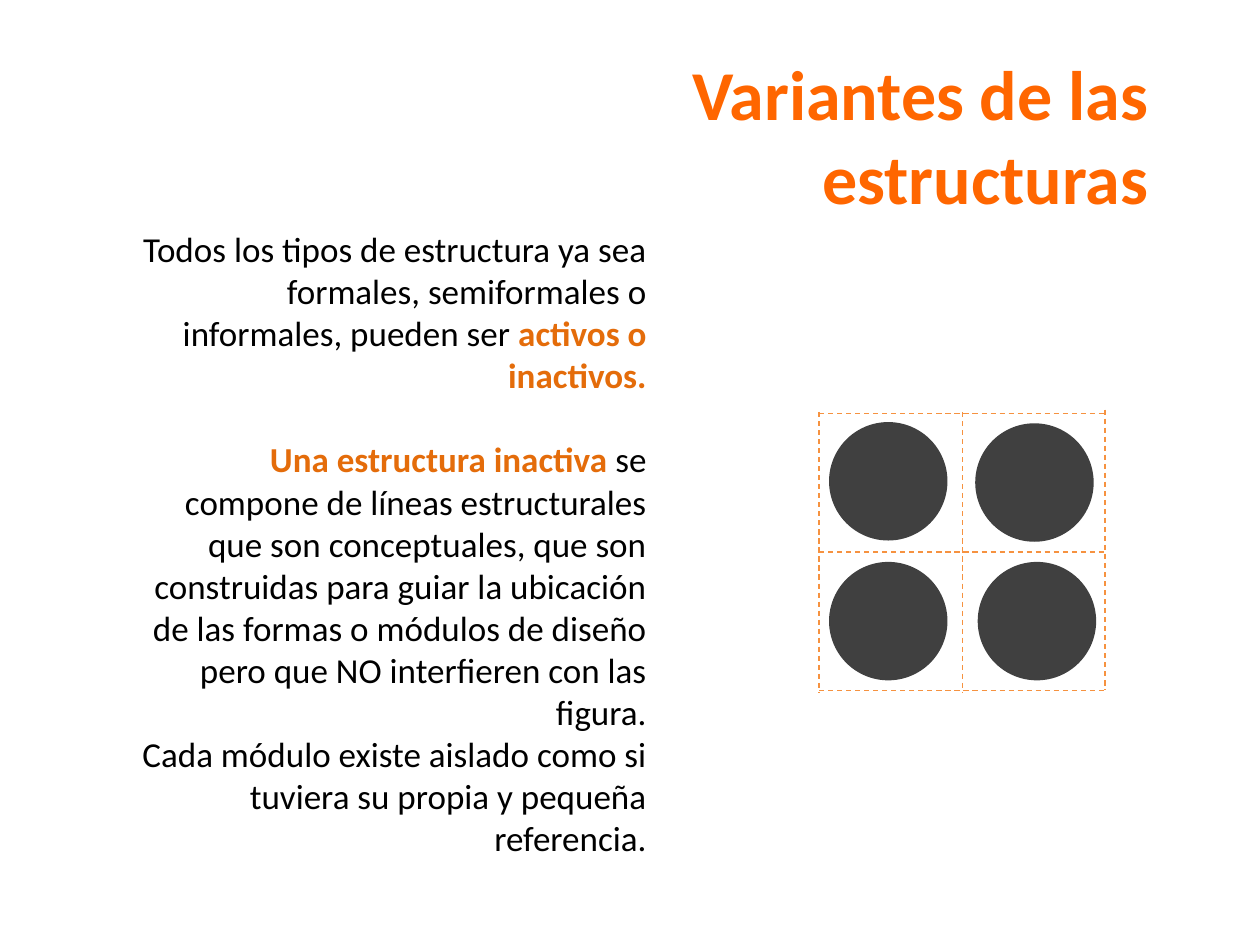
import pptx
import pptx.util
import pptx.dml.color
import pptx.enum.dml
import pptx.enum.shapes
import pptx.enum.text
import pptx.oxml.ns
import lxml.etree

Inches = pptx.util.Inches
Pt = pptx.util.Pt

COLORS = {
    "title": "FF6600",
    "accent": "E46C0A",
    "text": "000000",
    "disc": "404040",
    "grid": "F69240",
}
TITLE = {"size": Pt(40), "bold": True, "name": "Calibri"}
PLAIN = {"size": Pt(20), "bold": False, "name": "Calibri"}
STRONG = {**PLAIN, "bold": True}
FRAME = {"word_wrap": True, "auto_size": pptx.enum.text.MSO_AUTO_SIZE.SHAPE_TO_FIT_TEXT}
DASH = {"width": Pt(0.75), "dash_style": pptx.enum.dml.MSO_LINE.DASH}

HEAD = [(0, [("Variantes de las estructuras", TITLE, "title")])]
BODY = [
    (0, [("Todos los tipos de estructura ya sea formales, semiformales o "
          "informales, pueden ser ", PLAIN, "text"),
         ("activos o inactivos.", STRONG, "accent")]),
    (24, [("Una estructura inactiva ", STRONG, "accent"),
          ("se compone de líneas estructurales que son conceptuales, que son "
           "construidas para guiar la ubicación de las formas o módulos de "
           "diseño pero que NO interfieren con las figura.", PLAIN, "text")]),
    (0, [("Cada módulo existe aislado como si tuviera su propia y pequeña "
          "referencia.", PLAIN, "text")]),
]
DISCS = [(6.58, 3.35), (7.74, 3.36), (6.58, 4.46), (7.76, 4.46)]
ROWS = [3.28, 5.48, 4.38]
COLS = [(8.77, 3.25, 5.48), (7.64, 3.27, 5.5), (6.5, 3.27, 5.5)]


def tint(name):
    """Return the named colour."""
    return pptx.dml.color.RGBColor.from_string(COLORS[name])


def style(item, values):
    """Set each format value on the item."""
    for key, value in values.items():
        setattr(item, key, value)


def add_text(slide, box, paras):
    """Add a right-aligned text box of styled runs."""
    frame = slide.shapes.add_textbox(*map(Inches, box)).text_frame
    style(frame, FRAME)
    for index, (gap, runs) in enumerate(paras):
        para = frame.add_paragraph() if index else frame.paragraphs[0]
        style(para, {"alignment": pptx.enum.text.PP_ALIGN.RIGHT, "space_before": Pt(gap)})
        for text, font, color in runs:
            run = para.add_run()
            run.text = text
            style(run.font, font)
            run.font.color.rgb = tint(color)


def add_disc(slide, left, top, size=0.94):
    """Add one dark module of the structure."""
    kind = pptx.enum.shapes.MSO_SHAPE.OVAL
    disc = slide.shapes.add_shape(kind, *map(Inches, (left, top, size, size)))
    disc.shadow.inherit = False
    disc.fill.solid()
    disc.fill.fore_color.rgb = tint("disc")
    disc.line.fill.background()


def add_line(slide, *ends):
    """Add one dashed structural line."""
    kind = pptx.enum.shapes.MSO_CONNECTOR.STRAIGHT
    line = slide.shapes.add_connector(kind, *map(Inches, ends))
    line.line.color.rgb = tint("grid")
    style(line.line, DASH)
    props = line.element.find(pptx.oxml.ns.qn("p:spPr"))
    lxml.etree.SubElement(props, pptx.oxml.ns.qn("a:effectLst"))


def main():
    """Build and save the slide."""
    deck = pptx.Presentation()
    style(deck, {"slide_width": Inches(10), "slide_height": Inches(7.5)})
    slide = deck.slides.add_slide(deck.slide_layouts[6])
    add_text(slide, (3.62, 0.35, 5.59, 1.45), HEAD)
    add_text(slide, (0.98, 1.76, 4.25, 6.83), BODY)
    for left, top in DISCS:
        add_disc(slide, left, top)
    for y in ROWS:
        add_line(slide, 6.5, y, 8.79, y)
    for x, top, bottom in COLS:
        add_line(slide, x, top, x, bottom)
    deck.save("out.pptx")


if __name__ == "__main__":
    main()
